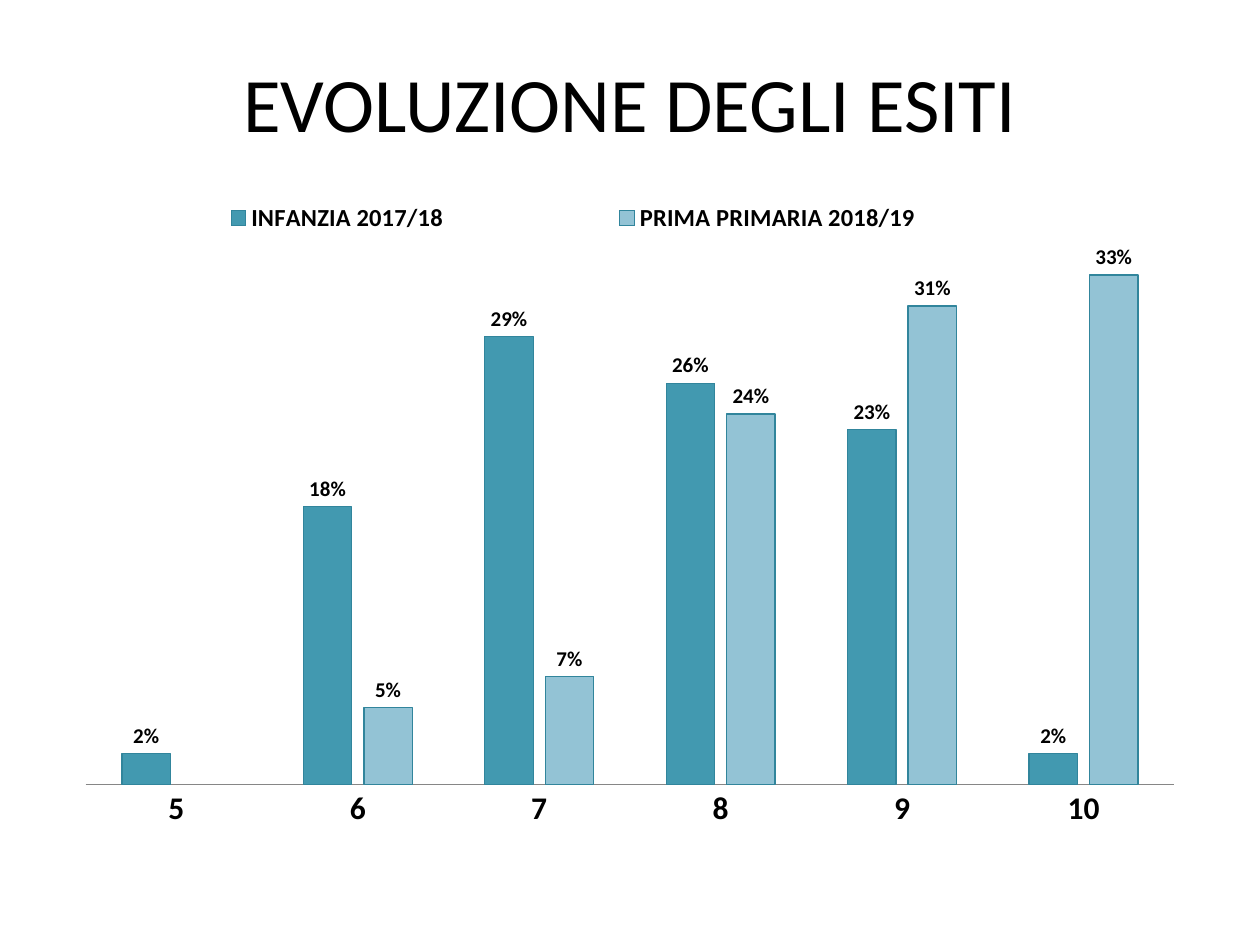
"""Build the slide comparing pupils' results across two school years."""
from lxml.etree import SubElement
from pptx import Presentation
from pptx.chart.data import CategoryChartData
from pptx.dml.color import RGBColor
from pptx.enum.chart import XL_CHART_TYPE, XL_LABEL_POSITION, XL_LEGEND_POSITION, XL_TICK_MARK
from pptx.enum.text import MSO_ANCHOR, PP_ALIGN
from pptx.oxml.ns import qn
from pptx.util import Cm, Pt

HEADING = "EVOLUZIONE DEGLI ESITI"
GRADES = ["5", "6", "7", "8", "9", "10"]
RESULTS = [
    ("INFANZIA 2017/18", "infanzia", [0.02, 0.18, 0.29, 0.26, 0.23, 0.02]),
    ("PRIMA PRIMARIA 2018/19", "primaria", [None, 0.05, 0.07, 0.24, 0.31, 0.33]),
]
COLORS = {
    "text": "000000",
    "infanzia": "4299B0",
    "primaria": "93C3D5",
    "outline": "31859C",
    "axis": "868686",
}
HEADING_BOX = (1.27, 0.76, 22.86, 2.57)
CHART_BOX = (1.27, 3.73, 22.86, 13.28)
PLOT_LAYOUT = {"layoutTarget": "inner", "xMode": "edge", "yMode": "edge",
               "x": 0.02, "y": 0.09, "w": 0.96, "h": 0.82}
LEGEND_LAYOUT = {"xMode": "edge", "yMode": "edge",
                 "x": 0, "y": 0.02, "w": 0.9, "h": 0.06}


def color(name):
    return RGBColor.from_string(COLORS[name])


def apply(target, **values):
    for name, value in values.items():
        setattr(target, name, value)


def style_text(font, size, bold=False):
    apply(font, name="Calibri", size=Pt(size), bold=bold)
    font.color.rgb = color("text")


def set_layout(part, values):
    layout = part.find(qn("c:layout"))
    if layout is None:
        layout = part.makeelement(qn("c:layout"))
        part.insert(1 if part.tag == qn("c:legend") else 0, layout)
    manual = SubElement(layout, qn("c:manualLayout"))
    for name, value in values.items():
        SubElement(manual, qn(f"c:{name}")).set("val", str(value))


def add_heading(slide):
    heading = slide.shapes.title
    left, top, width, height = map(Cm, HEADING_BOX)
    apply(heading, left=left, top=top, width=width, height=height)
    heading.text_frame.text = HEADING
    heading.text_frame.vertical_anchor = MSO_ANCHOR.MIDDLE
    line = heading.text_frame.paragraphs[0]
    line.alignment = PP_ALIGN.CENTER
    style_text(line.runs[0].font, 44)


def add_results(slide):
    data = CategoryChartData(number_format="0%")
    data.categories = GRADES
    for label, _, shares in RESULTS:
        data.add_series(label, shares)
    results = slide.shapes.add_chart(
        XL_CHART_TYPE.COLUMN_CLUSTERED, *map(Cm, CHART_BOX), data).chart
    apply(results, has_title=False, has_legend=True)
    style_text(results.font, 18)

    legend = results.legend
    apply(legend, position=XL_LEGEND_POSITION.TOP, include_in_layout=False)
    style_text(legend.font, 14, True)

    grades = results.category_axis
    apply(grades, major_tick_mark=XL_TICK_MARK.NONE, has_major_gridlines=False)
    style_text(grades.tick_labels.font, 18, True)
    grades.format.line.color.rgb = color("axis")
    apply(results.value_axis, visible=False, has_major_gridlines=False,
          minimum_scale=0, maximum_scale=0.35)

    plot = results.plots[0]
    apply(plot, gap_width=150, overlap=-25, vary_by_categories=False)
    for series, (_, fill, _) in zip(plot.series, RESULTS):
        series.format.fill.solid()
        series.format.fill.fore_color.rgb = color(fill)
        series.format.line.color.rgb = color("outline")
        series.format.line.width = Pt(0.75)
        labels = series.data_labels
        apply(labels, show_value=True, number_format="0%",
              number_format_is_linked=False, position=XL_LABEL_POSITION.OUTSIDE_END)
        style_text(labels.font, 12, True)

    space = results.element
    set_layout(space.find(".//" + qn("c:plotArea")), PLOT_LAYOUT)
    set_layout(space.find(".//" + qn("c:legend")), LEGEND_LAYOUT)


def main():
    deck = Presentation()
    apply(deck, slide_width=Cm(25.4), slide_height=Cm(19.05))
    slide = deck.slides.add_slide(deck.slide_layouts[5])
    add_heading(slide)
    add_results(slide)
    deck.save("out.pptx")


if __name__ == "__main__":
    main()
